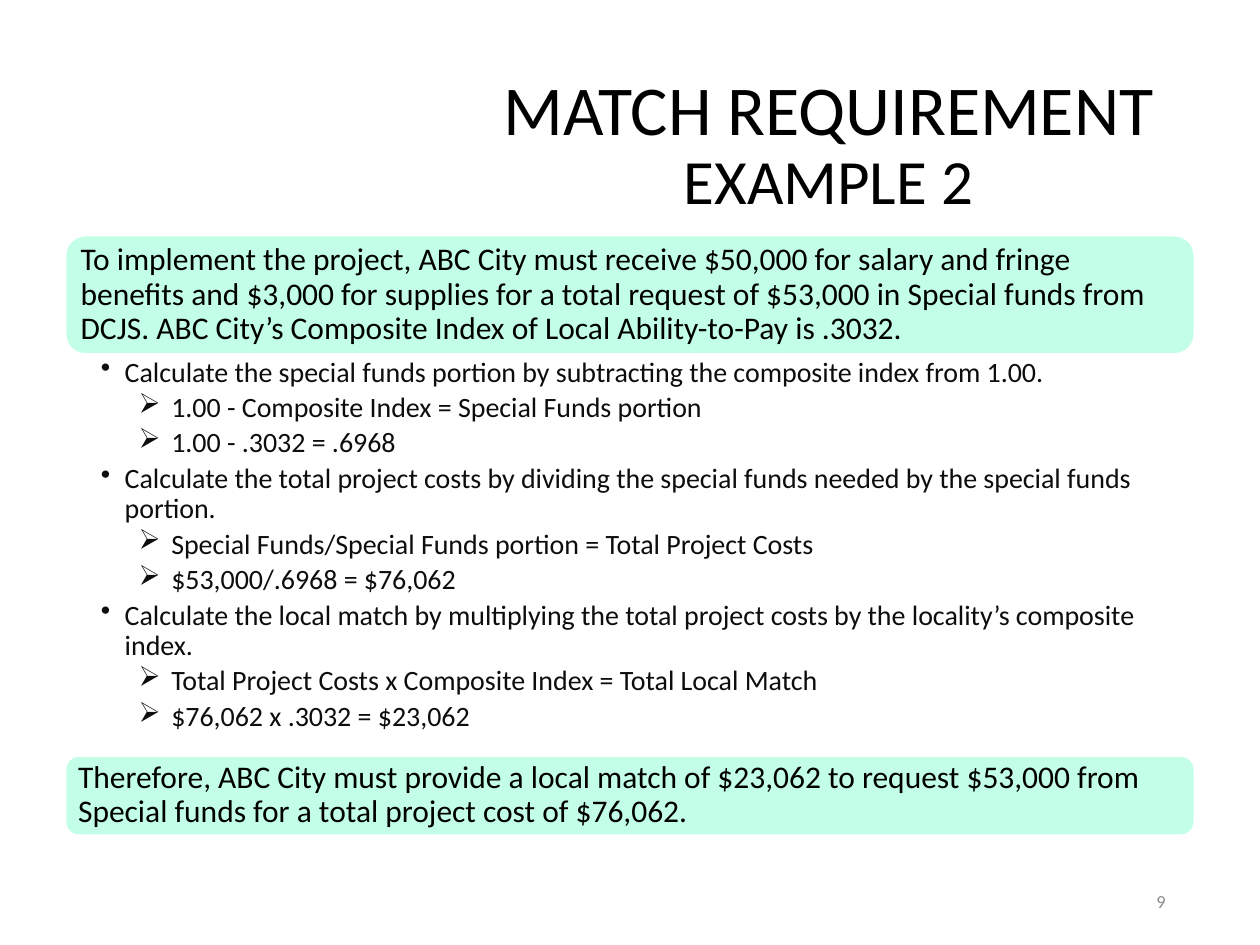
from pptx import Presentation
from pptx import util as u
from pptx.dml.color import RGBColor
from pptx.enum import shapes, text
from pptx.oxml.ns import qn
from lxml import etree

BLACK = RGBColor(0x00, 0x00, 0x00)
INK = RGBColor(0x0D, 0x0D, 0x0D)
GRAY = RGBColor(0x8C, 0x8C, 0x8C)
MINT = RGBColor(0xC3, 0xFF, 0xE7)
WHITE = RGBColor(0xFF, 0xFF, 0xFF)

prs = Presentation()
prs.slide_width, prs.slide_height = u.Inches(10), u.Inches(7.5)
s = prs.slides.add_slide(prs.slide_layouts[6])


def add_text(box, insets=(0.1, 0.05, 0.1, 0.05), anchor=text.MSO_ANCHOR.MIDDLE):
    tf = s.shapes.add_textbox(*[u.Inches(v) for v in box]).text_frame
    tf.word_wrap = True
    tf.vertical_anchor = anchor
    tf.margin_left, tf.margin_top, tf.margin_right, tf.margin_bottom = [
        u.Inches(v) for v in insets]
    return tf


def style(run, size, color):
    run.font.name = "Calibri"
    run.font.size = u.Pt(size)
    run.font.color.rgb = color


# Title, second part slightly smaller
tf = add_text((3.4, 0.46, 6.35, 1.41))
p = tf.paragraphs[0]
p.alignment = text.PP_ALIGN.CENTER
p.line_spacing = 0.9
for words, size in (("MATCH REQUIREMENT ", 40), ("EXAMPLE 2", 36)):
    r = p.add_run()
    r.text = words
    style(r, size, BLACK)

# Mint panels: the situation and the conclusion
panels = [
    (1.87, 0.94, 0.05,
     "To implement the project, ABC City must receive $50,000 for salary and "
     "fringe benefits and $3,000 for supplies for a total request of $53,000 in "
     "Special funds from DCJS. ABC City’s Composite Index of Local "
     "Ability-to-Pay is .3032."),
    (6, 0.63, 0.03,
     "Therefore, ABC City must provide a local match of $23,062 to request "
     "$53,000 from Special funds for a total project cost of $76,062."),
]
for top, height, pad, words in panels:
    sp = s.shapes.add_shape(shapes.MSO_SHAPE.ROUNDED_RECTANGLE, u.Inches(0.52),
                            u.Inches(top), u.Inches(8.96), u.Inches(height))
    sp.shadow.inherit = False
    sp.fill.solid()
    sp.fill.fore_color.rgb = MINT
    sp.line.color.rgb = WHITE
    sp.line.width = u.Pt(1)
    tf = add_text((0.52 + pad, top + pad, 8.96 - 2 * pad, height - 2 * pad), (0.07,) * 4)
    p = tf.paragraphs[0]
    p.text = words
    p.line_spacing = 0.9
    style(p.runs[0], 18, BLACK)

# Calculation steps, each followed by its formula and result
steps = [
    ("Calculate the special funds portion by subtracting the composite index from 1.00.",
     "1.00 - Composite Index = Special Funds portion",
     "1.00 - .3032 = .6968"),
    ("Calculate the total project costs by dividing the special funds needed by the "
     "special funds portion.",
     "Special Funds/Special Funds portion = Total Project Costs",
     "$53,000/.6968 = $76,062"),
    ("Calculate the local match by multiplying the total project costs by the "
     "locality’s composite index.",
     "Total Project Costs x Composite Index = Total Local Match",
     "$76,062 x .3032 = $23,062"),
]
tf = add_text((0.52, 2.82, 8.96, 3.19), (0.28, 0.02, 0.12, 0.02), text.MSO_ANCHOR.TOP)
tf.text = "\n".join(line for step in steps for line in step)
for i, p in enumerate(tf.paragraphs):
    level, indent, hang, bullet = (2, 0.56, 0.26, "➢") if i % 3 else (1, 0.19, 0.19, "•")
    p.level = level
    p.line_spacing = 0.9
    p.space_after = u.Pt(3)
    pPr = p._p.get_or_add_pPr()
    pPr.set("marL", str(u.Inches(indent)))
    pPr.set("indent", str(-u.Inches(hang)))
    etree.SubElement(pPr, qn("a:buChar")).set("char", bullet)
    style(p.runs[0], 16, INK)

# Page number
tf = add_text((7.19, 6.95, 2.16, 0.4))
p = tf.paragraphs[0]
p.text = "9"
p.alignment = text.PP_ALIGN.RIGHT
style(p.runs[0], 10.5, GRAY)

prs.save("out.pptx")
